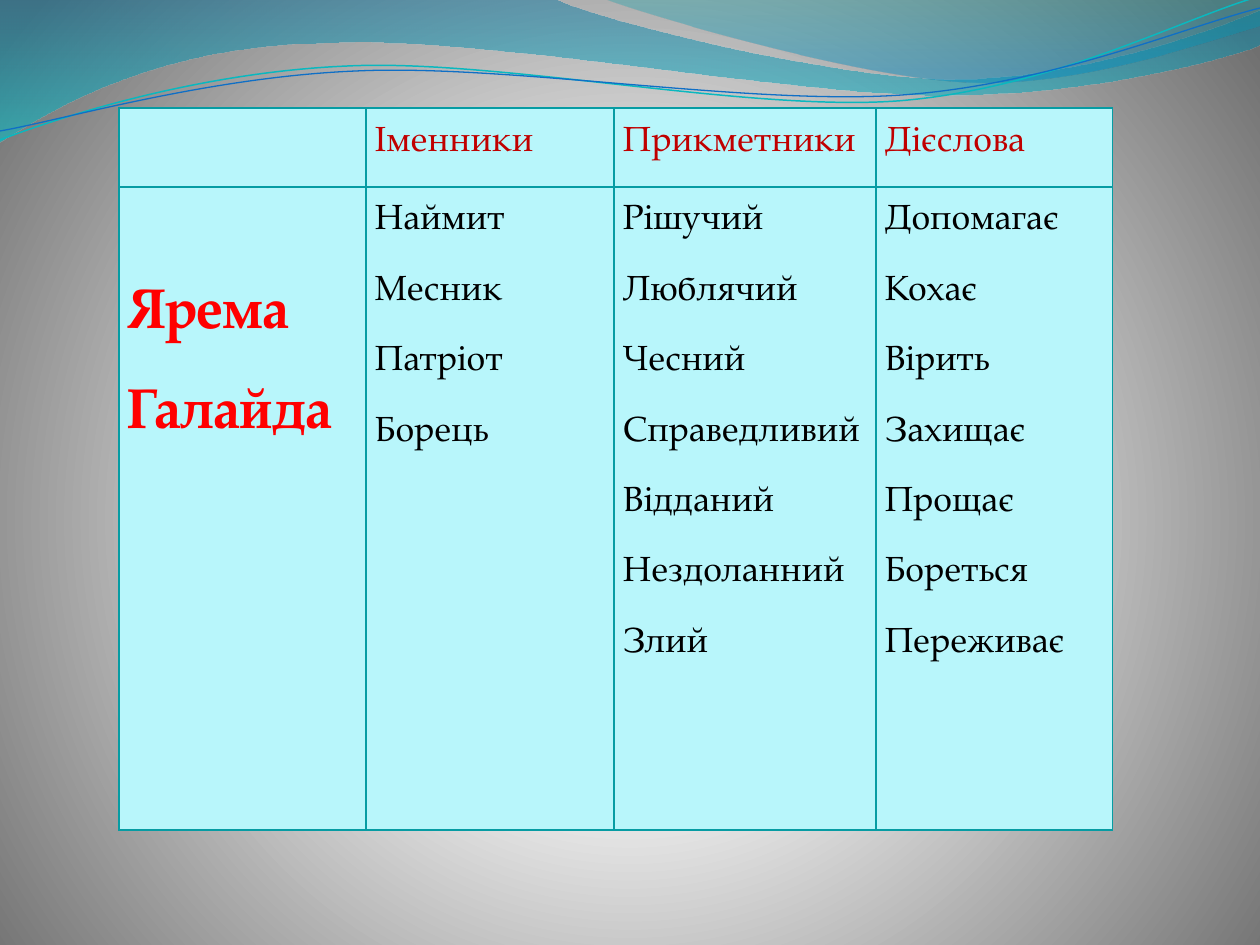
from math import cos, radians, sin

from lxml.etree import SubElement
from pptx import Presentation
from pptx.dml.color import RGBColor
from pptx.oxml.ns import qn
from pptx.util import Emu, Pt

EMU_PER_PX = 914400 / 126
FONT = "TeX Gyre Pagella"
CELL_FILL, BORDER = "B8F6FB", "069CA3"
LINE_TILT = -2.7

HEADERS = ["", "Іменники", "Прикметники", "Дієслова"]
WORDS = [
    ["Ярема", "Галайда"],
    ["Наймит", "Месник", "Патріот", "Борець"],
    ["Рішучий", "Люблячий", "Чесний", "Справедливий", "Відданий", "Нездоланний", "Злий"],
    ["Допомагає", "Кохає", "Вірить", "Захищає", "Прощає", "Бореться", "Переживає"],
]
HEADER_STYLE = dict(size=Pt(20), bold=False, color="C00000")
NAME_STYLE = dict(size=Pt(32), bold=True, color="FF0000")
WORD_STYLE = dict(size=Pt(20), bold=False, color="000000")

# Each segment holds one end point (straight) or two controls and an end point (curve).
BROAD_WAVE = [
    [(0, 0)], [(554, -1)],
    [(600, 21), (837, 79), (955, 79)], [(1075, 79), (1207, 33), (1260, 11)],
    [(1261, 45)],
    [(1239, 55), (1096, 96), (940, 95)], [(784, 95), (481, 35), (324, 43)],
    [(163, 45), (58, 105), (-1, 142)],
]
RIGHT_WAVE = [
    [(604, -1)],
    [(641, 14), (859, 78), (969, 82)], [(1079, 87), (1211, 40), (1260, 26)],
    [(1260, 0)],
]
CYAN_LINE = [
    [(0, 140)],
    [(60, 117), (199, 72), (349, 66)], [(498, 59), (747, 112), (898, 101)],
    [(1050, 89), (1182, 19), (1257, -3)],
]
BLUE_LINE = [
    [(0, 131)],
    [(59, 121), (207, 77), (357, 71)], [(508, 64), (752, 106), (903, 95)],
    [(1053, 84), (1187, 26), (1260, 8)],
]


def px(n):
    return Emu(round(n * EMU_PER_PX))


def rgb(value):
    return RGBColor.from_string(value)


def turn(point, degrees):
    """Rotate a point clockwise about the slide's top left corner."""
    (x, y), a = point, radians(degrees)
    return x * cos(a) - y * sin(a), x * sin(a) + y * cos(a)


def set_gradient(props, stops, kind, attrs, focus=None):
    """Replace the solid fill in props by a gradient of (position, colour, opacity) stops."""
    solid = props.find(qn("a:solidFill"))
    grad = solid.makeelement(qn("a:gradFill"), {"rotWithShape": "1"})
    props.replace(solid, grad)
    stop_list = SubElement(grad, qn("a:gsLst"))
    for position, color, opacity in stops:
        stop = SubElement(stop_list, qn("a:gs"), pos=str(position * 1000))
        clr = SubElement(stop, qn("a:srgbClr"), val=color)
        if opacity < 100:
            SubElement(clr, qn("a:alpha"), val=str(opacity * 1000))
    direction = SubElement(grad, qn(f"a:{kind}"), attrs)
    if focus:
        SubElement(direction, qn("a:fillToRect"),
                   {side: str(v * 1000) for side, v in zip("ltrb", focus)})


def add_path(s, x, y, segments, close, tilt=0):
    """Draw segments as one outline whose frame is rotated by tilt degrees."""
    points = [turn((px(x + a), px(y + b)), -tilt) for seg in segments for a, b in seg]
    builder = s.shapes.build_freeform(*points[0], scale=1.0)
    builder.add_line_segments(points[1:], close=close)
    sp = builder.convert_to_shape()
    sp.shadow.inherit = False
    straight = iter(list(sp._element.spPr.iter(qn("a:lnTo"))))
    for segment in segments[1:]:
        parts = [next(straight) for _ in segment]
        if len(parts) == 3:
            curve = parts[0].makeelement(qn("a:cubicBezTo"))
            parts[0].addprevious(curve)
            for part in parts:
                curve.append(part[0])
                part.getparent().remove(part)
    if tilt:
        half_w, half_h = sp.width / 2, sp.height / 2
        cx, cy = turn((sp.left + half_w, sp.top + half_h), tilt)
        sp.left, sp.top = Emu(round(cx - half_w)), Emu(round(cy - half_h))
        sp.rotation = tilt
    return sp


def add_waves(s, x, y):
    for segments, stops in (
        (BROAD_WAVE, [(0, "0074A1", 45), (100, "00C6CF", 55)]),
        (RIGHT_WAVE, [(0, "00A1A9", 30), (80, "008BBF", 45)]),
    ):
        sp = add_path(s, x, y, segments, close=True)
        sp.line.fill.background()
        sp.fill.solid()
        set_gradient(sp._element.spPr, stops, "lin", {"ang": "5400000", "scaled": "1"})
    for segments, color, width in ((CYAN_LINE, "0AB8BF", 0.85), (BLUE_LINE, "0F6FC6", 0.75)):
        sp = add_path(s, x, y, segments, close=False, tilt=LINE_TILT)
        sp.fill.background()
        sp.line.color.rgb = rgb(color)
        sp.line.width = Pt(width)


def fill_cell(cell, lines, style, top=0):
    tc_pr = cell._tc.get_or_add_tcPr()
    for side in ("lnL", "lnR", "lnT", "lnB"):
        ln = SubElement(tc_pr, qn(f"a:{side}"), w=str(Pt(0.75)))
        SubElement(SubElement(ln, qn("a:solidFill")), qn("a:srgbClr"), val=BORDER)
    cell.fill.solid()
    cell.fill.fore_color.rgb = rgb(CELL_FILL)
    margins = dict(margin_left=px(9), margin_right=px(9), margin_top=px(top), margin_bottom=0)
    for name, value in margins.items():
        setattr(cell, name, value)
    tf = cell.text_frame
    for i, line in enumerate(lines):
        p = tf.add_paragraph() if i else tf.paragraphs[0]
        p.line_spacing, p.space_after = 1.5, Pt(10)
        r = p.add_run()
        r.text = line
        r.font.name = FONT
        r.font.color.rgb = rgb(style["color"])
        for name in ("size", "bold"):
            setattr(r.font, name, style[name])


def add_word_table(s, x, y, widths, heights):
    frame = s.shapes.add_table(len(heights), len(widths), px(x), px(y),
                               px(sum(widths)), px(sum(heights)))
    table = frame.table
    table.first_row = table.horz_banding = False
    for column, width in zip(table.columns, widths):
        column.width = px(width)
    for row, height in zip(table.rows, heights):
        row.height = px(height)
    for i, (header, words) in enumerate(zip(HEADERS, WORDS)):
        fill_cell(table.cell(0, i), [header] if header else [], HEADER_STYLE)
        style, top = (WORD_STYLE, 0) if i else (NAME_STYLE, 74)
        fill_cell(table.cell(1, i), words, style, top)


def paint_background(s):
    s.background.fill.solid()
    set_gradient(s._element.find(f".//{qn('p:bgPr')}"),
                 [(0, "FFFFFF", 100), (25, "FFFFFF", 100), (100, "707070", 100)],
                 "path", {"path": "circle"}, focus=(10, 110, 10, 100))


def main():
    prs = Presentation()
    prs.slide_width, prs.slide_height = px(1260), px(945)
    s = prs.slides.add_slide(prs.slide_layouts[6])
    paint_background(s)
    add_waves(s, 0, 0)
    add_word_table(s, 119, 108, widths=[247, 248, 262, 237], heights=[79, 643])
    prs.save("out.pptx")


if __name__ == "__main__":
    main()
